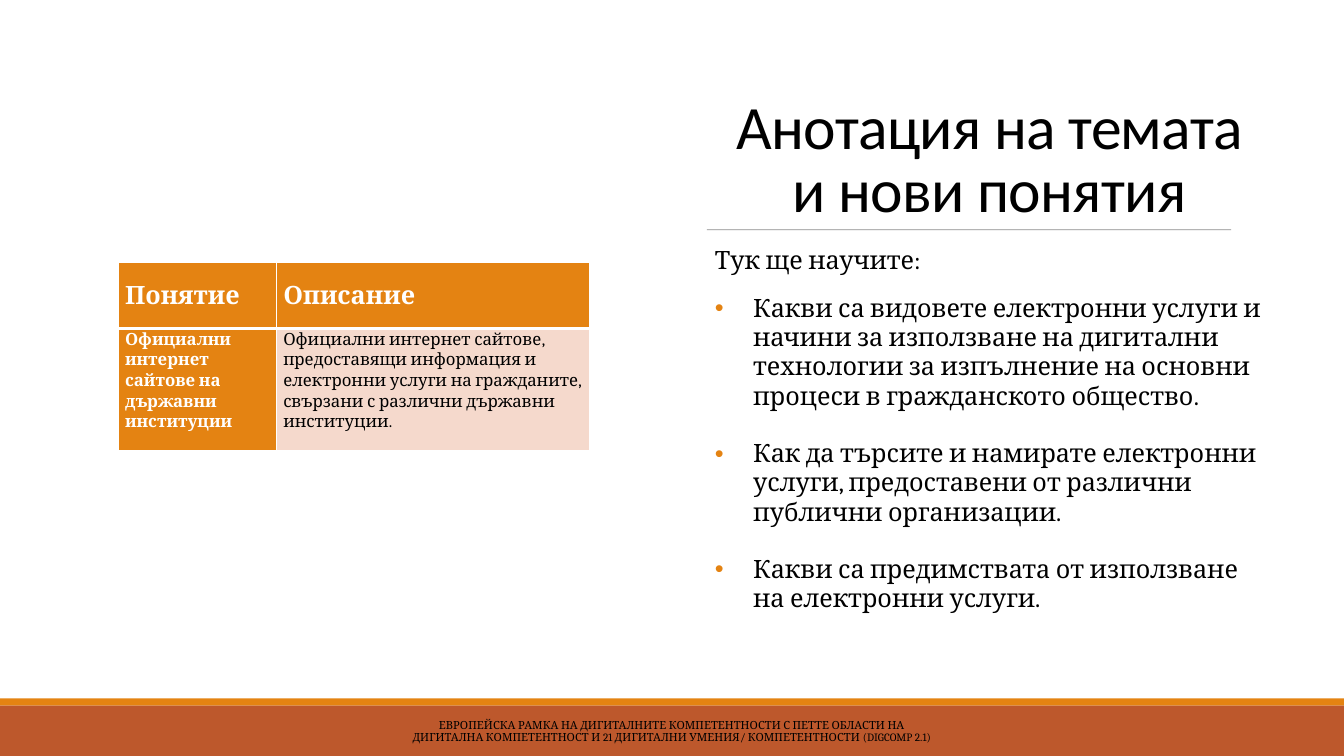
from dataclasses import dataclass

from lxml.etree import SubElement
from pptx import Presentation
from pptx.dml.color import RGBColor
from pptx.enum.shapes import MSO_CONNECTOR as Connector, MSO_SHAPE as Shape
from pptx.enum.text import MSO_ANCHOR as Anchor, MSO_AUTO_SIZE as AutoSize, PP_ALIGN as Align
from pptx.oxml.ns import qn
from pptx.util import Inches, Pt


@dataclass(frozen=True)
class Theme:
    orange: str = "E48312"
    rust: str = "BD582C"
    blush: str = "F5D9CC"
    gray: str = "808080"
    white: str = "FFFFFF"
    black: str = "000000"
    heading_font: str = "Calibri"
    body_font: str = "Cambria"
    title_size: int = 44
    body_size: int = 18
    cell_size: int = 12
    footer_size: int = 8


theme = Theme()


def write(para, text, size=theme.body_size, font=theme.body_font, color=theme.black,
          bold=False, align=Align.LEFT, spacing=1.0, before=0, after=0, bullet=False):
    para.alignment, para.line_spacing = align, spacing
    para.space_before, para.space_after = Pt(before), Pt(after)
    if bullet:
        props = para._p.get_or_add_pPr()
        props.set("marL", str(Inches(0.38)))
        props.set("indent", str(Inches(-0.38)))
        bullet_color = SubElement(props, qn("a:buClr"))
        SubElement(bullet_color, qn("a:srgbClr"), val=theme.orange)
        SubElement(props, qn("a:buFont"), typeface="Arial")
        SubElement(props, qn("a:buChar"), char="•")
    span = para.add_run()
    span.text = text
    span.font.size, span.font.name, span.font.bold = Pt(size), font, bold
    span.font.color.rgb = RGBColor.from_string(color)
    return span


def add_text_box(left, top, width, height, inset, anchor=Anchor.TOP):
    box = slide.shapes.add_textbox(Inches(left), Inches(top), Inches(width), Inches(height))
    frame = box.text_frame
    frame.word_wrap, frame.vertical_anchor = True, anchor
    frame.margin_left = frame.margin_right = Inches(inset)
    frame.margin_top = frame.margin_bottom = Inches(inset)
    return frame


deck = Presentation()
deck.slide_width, deck.slide_height = Inches(13.33), Inches(7.5)
slide = deck.slides.add_slide(deck.slide_layouts[5])

# Title and the rule below it
title = slide.shapes.title
title.left, title.top = Inches(7.01), Inches(0.69)
title.width, title.height = Inches(5.61), Inches(1.59)
frame = title.text_frame
frame.word_wrap, frame.auto_size = True, AutoSize.NONE
frame.vertical_anchor = Anchor.BOTTOM
span = write(frame.paragraphs[0], "Анотация на темата и нови понятия", size=theme.title_size,
             font=theme.heading_font, align=Align.CENTER, spacing=0.85)
span.font._element.set("spc", "-50")

rule = slide.shapes.add_connector(
    Connector.STRAIGHT, Inches(7.01), Inches(2.28), Inches(12.21), Inches(2.28))
rule.line.color.rgb = RGBColor.from_string(theme.gray)
rule.line.width = Pt(0.5)
rule_color = rule.line._ln.find(".//" + qn("a:srgbClr"))
SubElement(rule_color, qn("a:alpha"), val="90000")
SubElement(rule._element.spPr, qn("a:effectLst"))

# Learning goals
goals = [
    "Какви са видовете електронни услуги и начини за използване на дигитални технологии "
    "за изпълнение на основни процеси в гражданското общество.",
    "Как да търсите и намирате електронни услуги, предоставени от различни публични организации.",
    "Какви са предимствата от използване на електронни услуги.",
]
frame = add_text_box(7.01, 2.4, 5.61, 4.01, inset=0.08)
write(frame.paragraphs[0], "Тук ще научите:", spacing=0.8, after=2)
for goal in goals:
    write(frame.add_paragraph(), goal, spacing=0.97, before=12, after=8, bullet=True)

# Footer bands and text
for top, height, color in [(6.93, 0.07, theme.orange), (7, 0.5, theme.rust)]:
    band = slide.shapes.add_shape(
        Shape.RECTANGLE, 0, Inches(top), deck.slide_width, Inches(height))
    band.shadow.inherit = False
    band.fill.solid()
    band.fill.fore_color.rgb = RGBColor.from_string(color)
    band.line.fill.background()

frame = add_text_box(4.03, 7.06, 5.27, 0.4, inset=0.04, anchor=Anchor.MIDDLE)
write(frame.paragraphs[0],
      "ЕВРОПЕЙСКА РАМКА НА ДИГИТАЛНИТЕ КОМПЕТЕНТНОСТИ С ПЕТТЕ ОБЛАСТИ НА ДИГИТАЛНА "
      "КОМПЕТЕНТНОСТ И 21 ДИГИТАЛНИ УМЕНИЯ/ КОМПЕТЕНТНОСТИ (DIGCOMP 2.1)",
      size=theme.footer_size, align=Align.CENTER, spacing=0.9, after=6)

# Table of terms
terms = [
    ("Понятие", "Описание"),
    ("Официални интернет сайтове на държавни институции",
     "Официални интернет сайтове, предоставящи информация и електронни услуги на "
     "гражданите, свързани с различни държавни институции."),
]
table = slide.shapes.add_table(
    2, 2, Inches(1.17), Inches(2.6), Inches(4.68), Inches(1.87)).table
for column, width in zip(table.columns, (1.57, 3.11)):
    column.width = Inches(width)
for row, height in zip(table.rows, (0.66, 1.21)):
    row.height = Inches(height)

for row_index, row_texts in enumerate(terms):
    for column_index, text in enumerate(row_texts):
        cell = table.cell(row_index, column_index)
        is_header = row_index == 0
        is_label = is_header or column_index == 0
        cell.margin_left = cell.margin_right = Inches(0.07)
        cell.margin_top = cell.margin_bottom = 0
        cell.vertical_anchor = Anchor.MIDDLE if is_header else Anchor.TOP
        write(cell.text_frame.paragraphs[0], text,
              size=theme.body_size if is_header else theme.cell_size,
              color=theme.white if is_label else theme.black,
              bold=is_label, spacing=1.07, after=8)
        props = cell._tc.get_or_add_tcPr()
        for side in ("L", "R", "T", "B"):
            touches_header_rule = side == ("B" if is_header else "T")
            border = SubElement(props, qn("a:ln" + side),
                                w=str(Pt(3 if touches_header_rule else 1)))
            border_fill = SubElement(border, qn("a:solidFill"))
            SubElement(border_fill, qn("a:srgbClr"), val=theme.white)
        cell.fill.solid()
        cell.fill.fore_color.rgb = RGBColor.from_string(theme.orange if is_label else theme.blush)

deck.save("out.pptx")
